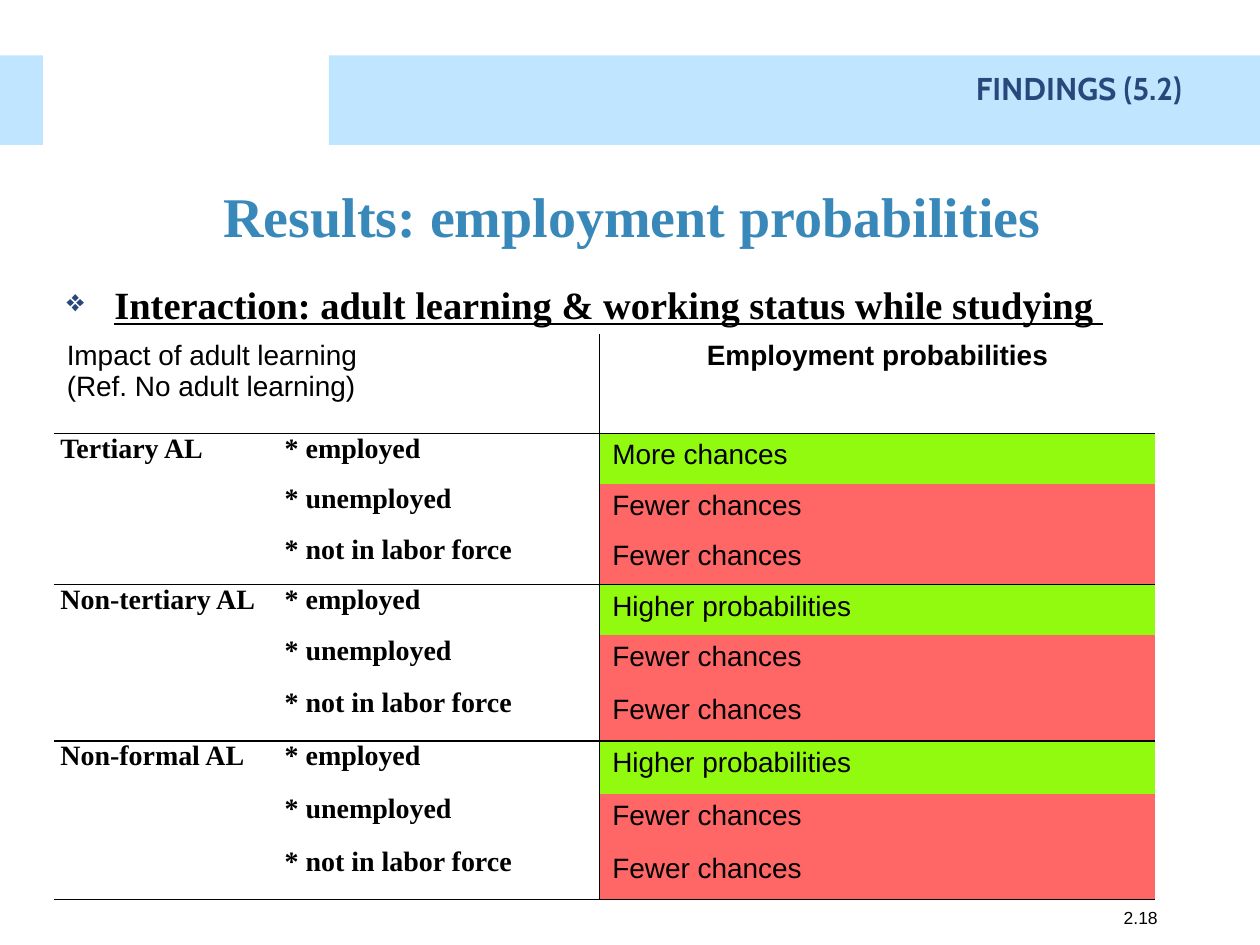
import pptx
import pptx.dml.color
import pptx.enum.shapes
import pptx.enum.text
import pptx.oxml
import pptx.oxml.ns
import pptx.util
from pptx.util import Inches

HUES = {"band": "0099FF", "title": "3988BA", "navy": "28487B",
        "ink": "000000", "good": "92FA0F", "bad": "FF6666"}
SERIF, SANS, HEAD = "Times New Roman", "Arial", "Cabin"
ALIGN = pptx.enum.text.PP_ALIGN
ANCHOR = pptx.enum.text.MSO_ANCHOR


class Deck:
    """Hold the style and the current slide, and draw its elements."""

    def __init__(self):
        self.show = pptx.Presentation()
        self.show.slide_width, self.show.slide_height = Inches(10), Inches(7.5)
        self.slide = self.show.slides.add_slide(self.show.slide_layouts[6])

    def tint(self, name):
        return pptx.dml.color.RGBColor.from_string(HUES[name])

    def node(self, xml):
        tag, rest = xml.split(" ", 1)
        space = pptx.oxml.ns.nsdecls("a")
        return pptx.oxml.parse_xml(f"<a:{tag} {space} {rest}")

    def band(self, left, width):
        shape = self.slide.shapes.add_shape(
            pptx.enum.shapes.MSO_SHAPE.RECTANGLE,
            Inches(left), Inches(0.44), Inches(width), Inches(0.71))
        shape.shadow.inherit = False
        shape.fill.solid()
        shape.fill.fore_color.rgb = self.tint("band")
        shape.line.fill.background()
        for color in shape._element.spPr.iter(pptx.oxml.ns.qn("a:srgbClr")):
            color.append(self.node('alpha val="25000"/>'))

    def run(self, para, text, size, face, hue="ink", bold=False, line=False, align=ALIGN.LEFT):
        para.alignment = align
        run = para.add_run()
        run.text = text
        font = run.font
        font.size, font.name = pptx.util.Pt(size), face
        font.bold, font.underline = bold, line
        font.color.rgb = self.tint(hue)

    def text(self, box, text, size, face, anchor=ANCHOR.TOP, right=0.1, space=1.0,
             bullet=False, **style):
        frame = self.slide.shapes.add_textbox(*map(Inches, box)).text_frame
        frame.word_wrap = True
        frame.vertical_anchor = anchor
        frame.margin_right = Inches(right)
        para = frame.paragraphs[0]
        para.line_spacing = space
        if bullet:
            props = para._p.get_or_add_pPr()
            props.set("marL", str(Inches(0.38)))
            props.set("indent", str(Inches(-0.38)))
            for xml in (f'buClr ><a:srgbClr val="{HUES["navy"]}"/></a:buClr>',
                        'buSzPct val="80000"/>', 'buChar char="❖"/>'):
                props.append(self.node(xml))
        self.run(para, text, size, face, **style)

    def edge(self, cell, sides):
        props = cell._tc.get_or_add_tcPr()
        for spot, side in enumerate("LRTB"):
            fill = (f'<a:solidFill><a:srgbClr val="{HUES["ink"]}"/></a:solidFill>'
                    if side in sides else "<a:noFill/>")
            props.insert(spot, self.node(f'ln{side} w="12700">{fill}</a:ln{side}>'))

    def cell(self, cell, lines, face, pad, sides, fill=None, tab=None, **style):
        cell.margin_left = cell.margin_right = Inches(pad[0])
        cell.margin_top = cell.margin_bottom = Inches(pad[1])
        if fill:
            cell.fill.solid()
            cell.fill.fore_color.rgb = self.tint(fill)
        else:
            cell.fill.background()
        self.edge(cell, sides)
        frame = cell.text_frame
        for spot, line in enumerate(lines):
            para = frame.add_paragraph() if spot else frame.paragraphs[0]
            if tab:
                para._p.get_or_add_pPr().append(self.node(
                    f'tabLst ><a:tab pos="{Inches(tab)}" algn="l"/></a:tabLst>'))
            self.run(para, line, 16, face, **style)

    def table(self, groups, states):
        count = 1 + len(groups) * len(states)
        table = self.slide.shapes.add_table(
            count, 2, Inches(0.43), Inches(2.65), Inches(8.74), Inches(4.49)).table
        table.first_row = table.horz_banding = False
        for col, width in zip(table.columns, (4.33, 4.41)):
            col.width = Inches(width)
        for spot, row in enumerate(table.rows):
            row.height = Inches(0.79 if spot == 0 else 0.4 if spot < 5 else 0.42)
        wide, slim = (0.1, 0.05), (0.05, 0)
        self.cell(table.cell(0, 0), ["Impact of adult learning", "(Ref. No adult learning)"],
                  SANS, wide, "RB")
        self.cell(table.cell(0, 1), ["Employment probabilities"], SANS, wide, "LB",
                  bold=True, align=ALIGN.CENTER)
        for block, (group, good) in enumerate(groups):
            for step, state in enumerate(states):
                row = 1 + block * len(states) + step
                rule = "T" if step == 0 else "B" if step == len(states) - 1 else ""
                label = "" if step else group
                self.cell(table.cell(row, 0), [f"{label}\t* {state}"], SERIF, slim,
                          "R" + rule, tab=1.78, bold=True)
                self.cell(table.cell(row, 1), ["Fewer chances" if step else good], SANS,
                          wide, "L" + rule, fill="bad" if step else "good")


def main():
    deck = Deck()
    deck.band(2.61, 7.39)
    deck.band(0, 0.34)
    deck.text((0.43, 1.31, 9.29, 0.79), "Results: employment probabilities ", 32, SERIF,
              anchor=ANCHOR.MIDDLE, hue="title", bold=True, align=ALIGN.CENTER)
    deck.text((8.82, 7.15, 1.18, 0.35), "2.18", 10, SANS)
    deck.text((2.61, 0.44, 7.39, 0.71), "FINDINGS (5.2)", 18, HEAD, right=0.62, space=1.2,
              hue="navy", bold=True, align=ALIGN.RIGHT)
    deck.text((0.43, 2.18, 9.29, 0.79),
              "Interaction: adult learning & working status while studying ", 22, SERIF,
              bullet=True, bold=True, line=True)
    deck.table([("Tertiary AL", "More chances"),
                ("Non-tertiary AL", "Higher probabilities"),
                ("Non-formal AL", "Higher probabilities")],
               ["employed", "unemployed", "not in labor force"])
    deck.show.save("out.pptx")


if __name__ == "__main__":
    main()
